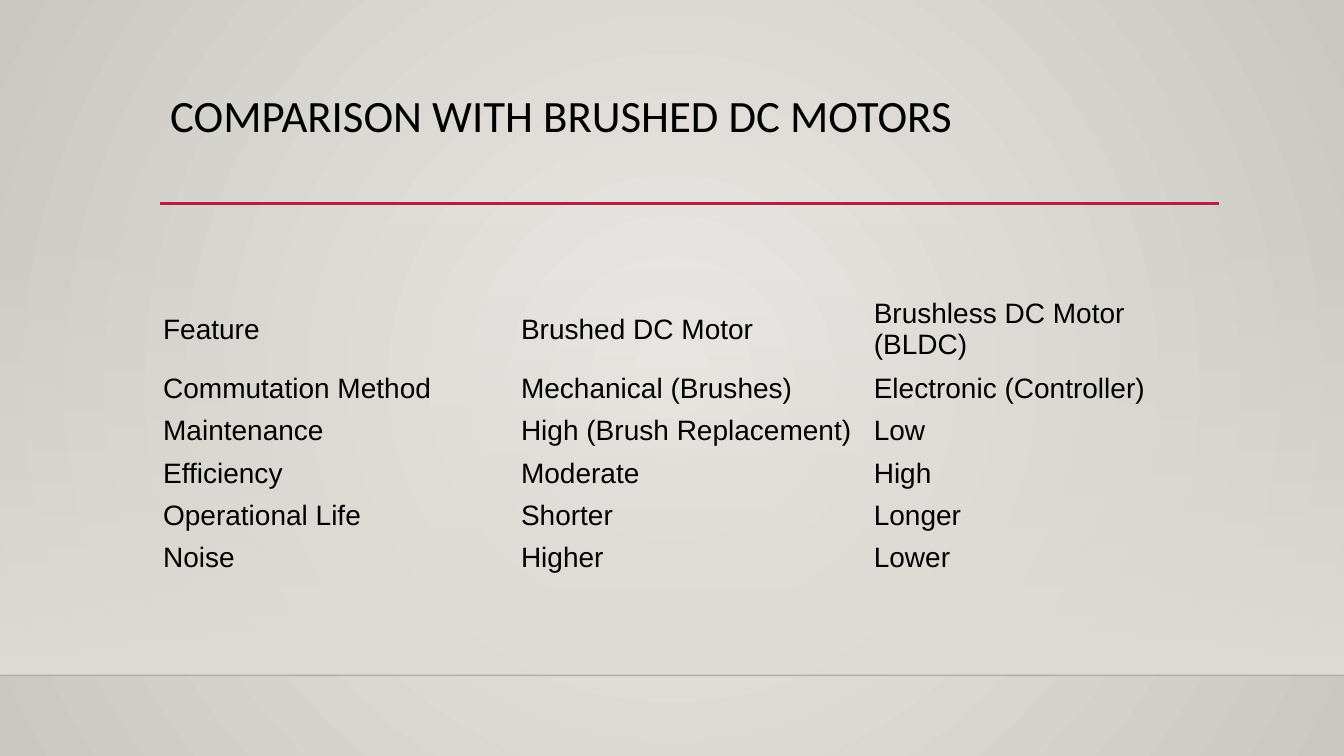
"""Build the slide that compares brushed and brushless DC motors."""
from dataclasses import dataclass

from lxml.etree import SubElement
from pptx import Presentation
from pptx.dml.color import RGBColor
from pptx.enum.shapes import MSO_CONNECTOR, MSO_SHAPE
from pptx.enum.text import MSO_ANCHOR
from pptx.oxml.ns import qn
from pptx.util import Cm, Pt


@dataclass(frozen=True)
class Theme:
    ink: RGBColor = RGBColor.from_string("000000")
    edge: RGBColor = RGBColor.from_string("000001")
    red: RGBColor = RGBColor.from_string("B71E42")
    light: RGBColor = RGBColor.from_string("ECEAE7")
    dark: RGBColor = RGBColor.from_string("CAC7C1")
    sand: RGBColor = RGBColor.from_string("DFDBD5")
    head: Pt = Pt(32)
    body: Pt = Pt(20)


def put(target, values):
    for name, value in values.items():
        setattr(target, name, value)


def fade(color, share):
    SubElement(color, qn("a:alpha"), val=str(share * 1000))


theme = Theme()
deck = Presentation()
put(deck, {"slide_width": Cm(33.87), "slide_height": Cm(19.05)})
slide = deck.slides.add_slide(deck.slide_layouts[6])
shapes = slide.shapes

back = slide.background.fill
back.gradient()
for stop, color in zip(back.gradient_stops, (theme.light, theme.dark)):
    stop.color.rgb = color
lin = slide.element.xpath(".//p:bg//a:lin")[0]
grad = lin.getparent()
grad.remove(lin)
ring = SubElement(grad, qn("a:path"), path="circle")
SubElement(ring, qn("a:fillToRect"), dict.fromkeys("ltrb", "50000"))

floor = shapes.add_shape(MSO_SHAPE.RECTANGLE, 0, Cm(5.61), deck.slide_width, Cm(11.41))
floor.shadow.inherit = False
floor.line.fill.background()
floor.fill.gradient()
floor.fill.gradient_angle = 270
for stop in floor.fill.gradient_stops:
    stop.color.rgb = theme.sand
fade(floor.element.xpath(".//a:gs/a:srgbClr")[0], 0)

rules = [
    (0, 33.87, 17.02, theme.edge, 1, 20),
    (4.04, 30.73, 5.13, theme.red, 2.5, 100),
]
for left, right, top, color, width, share in rules:
    rule = shapes.add_connector(MSO_CONNECTOR.STRAIGHT, Cm(left), Cm(top), Cm(right), Cm(top))
    rule.line.color.rgb = color
    rule.line.width = Pt(width)
    fade(rule.element.xpath(".//a:ln//a:srgbClr")[0], share)
    SubElement(rule.element.spPr, qn("a:effectLst"))

title = shapes.add_textbox(Cm(4.04), Cm(2.24), Cm(26.67), Cm(2.92)).text_frame
put(title, {"word_wrap": True, "vertical_anchor": MSO_ANCHOR.TOP})
line = title.paragraphs[0]
put(line, {"text": "COMPARISON WITH BRUSHED DC MOTORS", "line_spacing": 0.9})
put(line.runs[0].font, {"name": "Calibri", "size": theme.head})
line.runs[0].font.color.rgb = theme.ink

rows = [
    ("Feature", "Brushed DC Motor", "Brushless DC Motor (BLDC)"),
    ("Commutation Method", "Mechanical (Brushes)", "Electronic (Controller)"),
    ("Maintenance", "High (Brush Replacement)", "Low"),
    ("Efficiency", "Moderate", "High"),
    ("Operational Life", "Shorter", "Longer"),
    ("Noise", "Higher", "Lower"),
]
widths = (9.02, 8.89, 8.89)
heights = [1.85] + [1.04] * (len(rows) - 1)
frame = shapes.add_table(
    len(rows), len(widths), Cm(3.91), Cm(7.34), Cm(sum(widths)), Cm(sum(heights))
)
grid = frame.table
put(grid, {"first_row": False, "horz_banding": False})
frame.element.xpath(".//a:tableStyleId")[0].text = "{2D5ABB26-0587-4C30-8999-92F81FD0307C}"
for col, width in zip(grid.columns, widths):
    col.width = Cm(width)
for row, height, texts in zip(grid.rows, heights, rows):
    row.height = Cm(height)
    for cell, text in zip(row.cells, texts):
        put(cell, {
            "text": text,
            "vertical_anchor": MSO_ANCHOR.MIDDLE,
            "margin_left": Cm(0.2),
            "margin_right": Cm(0.2),
            "margin_top": Cm(0.11),
            "margin_bottom": Cm(0.11),
        })
        cell.fill.background()
        font = cell.text_frame.paragraphs[0].runs[0].font
        put(font, {"name": "Arial", "size": theme.body})
        font.color.rgb = theme.ink

deck.save("out.pptx")
